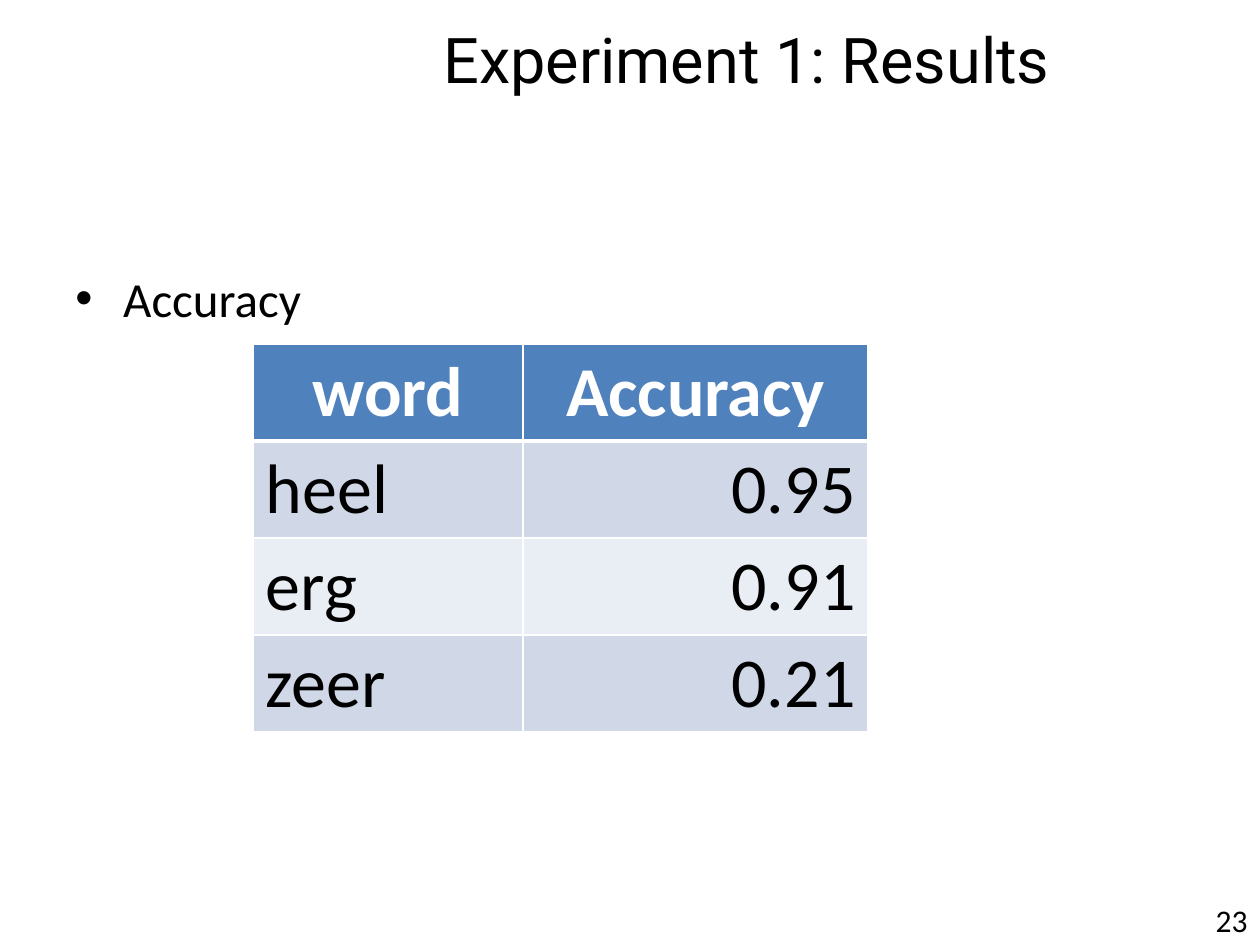
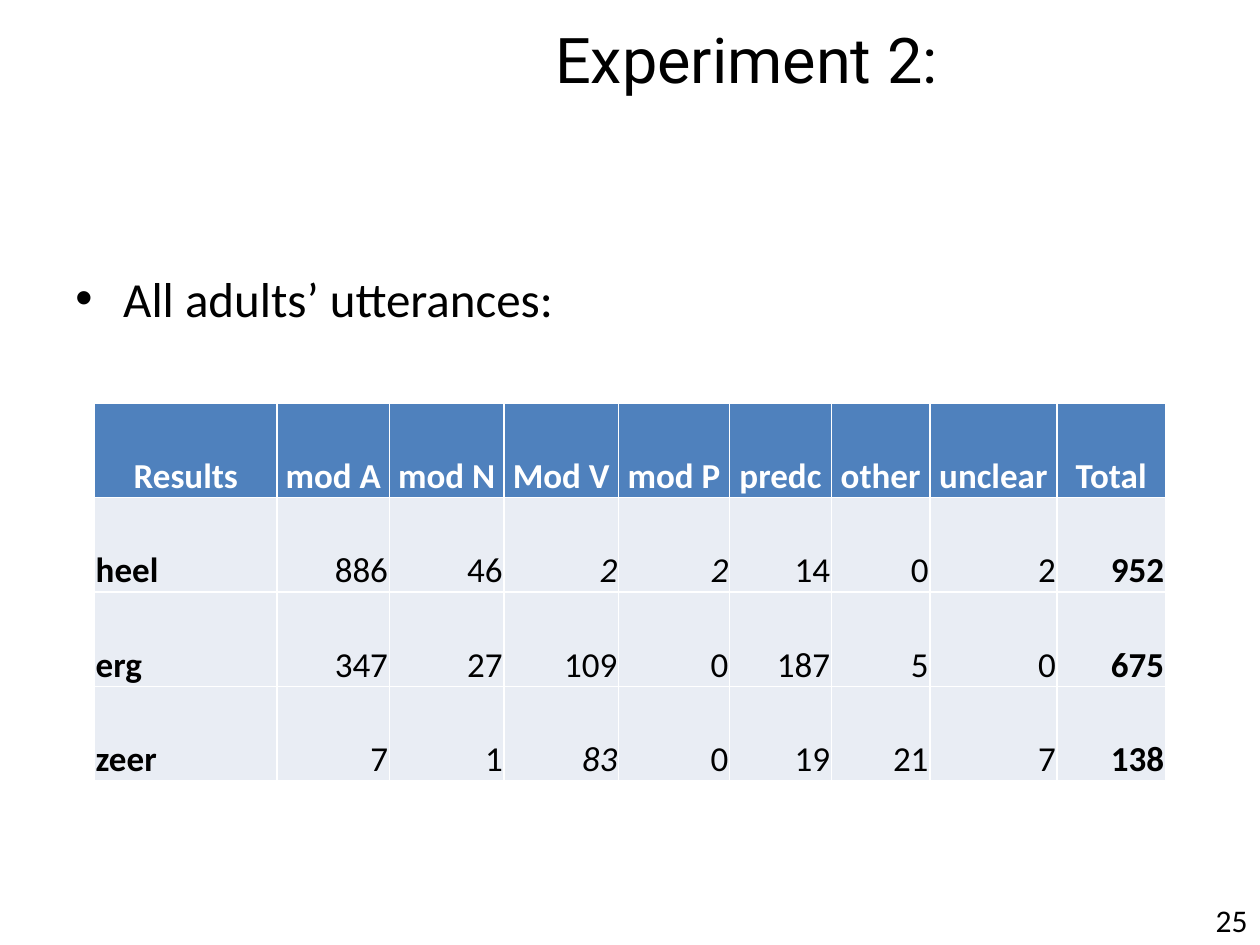
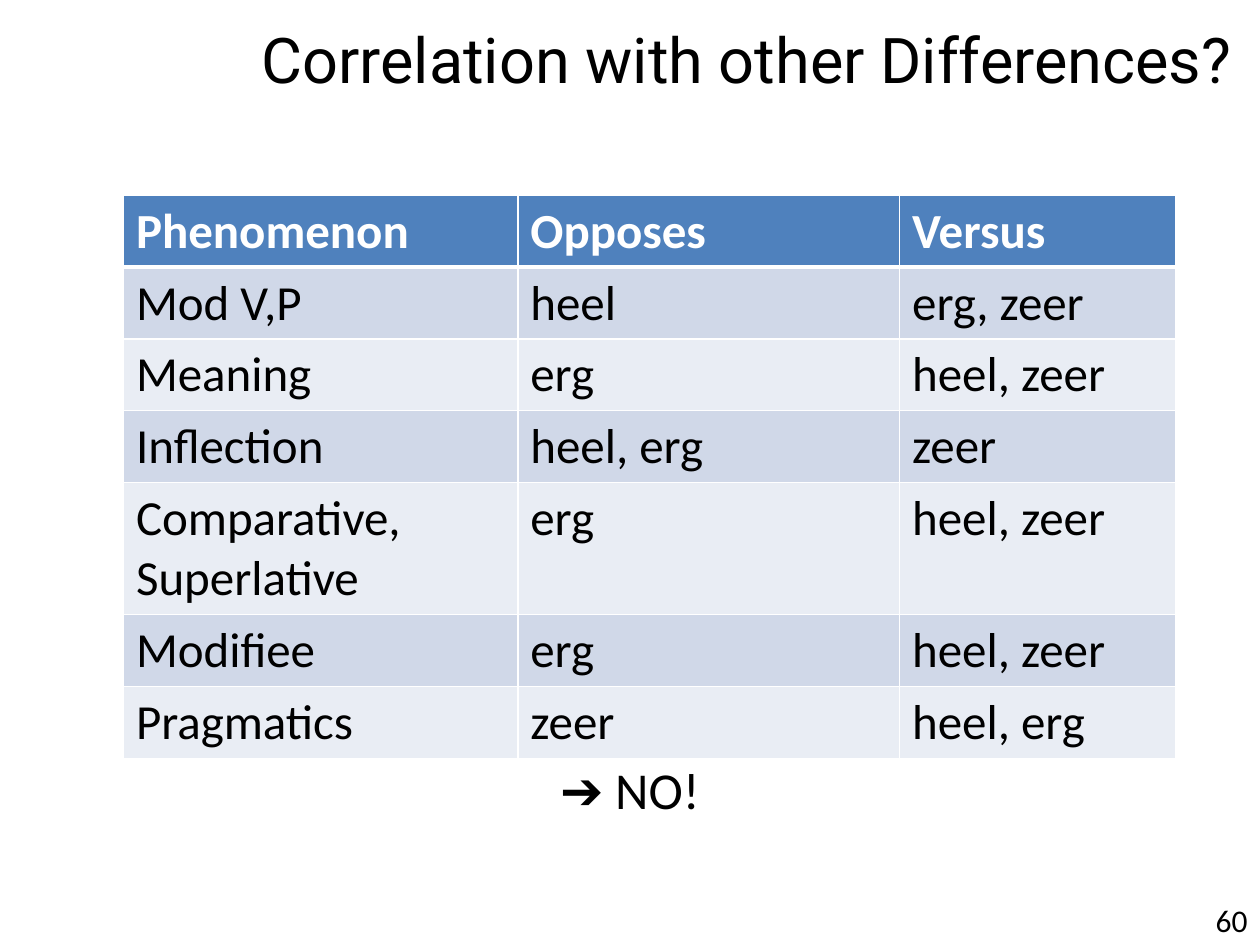
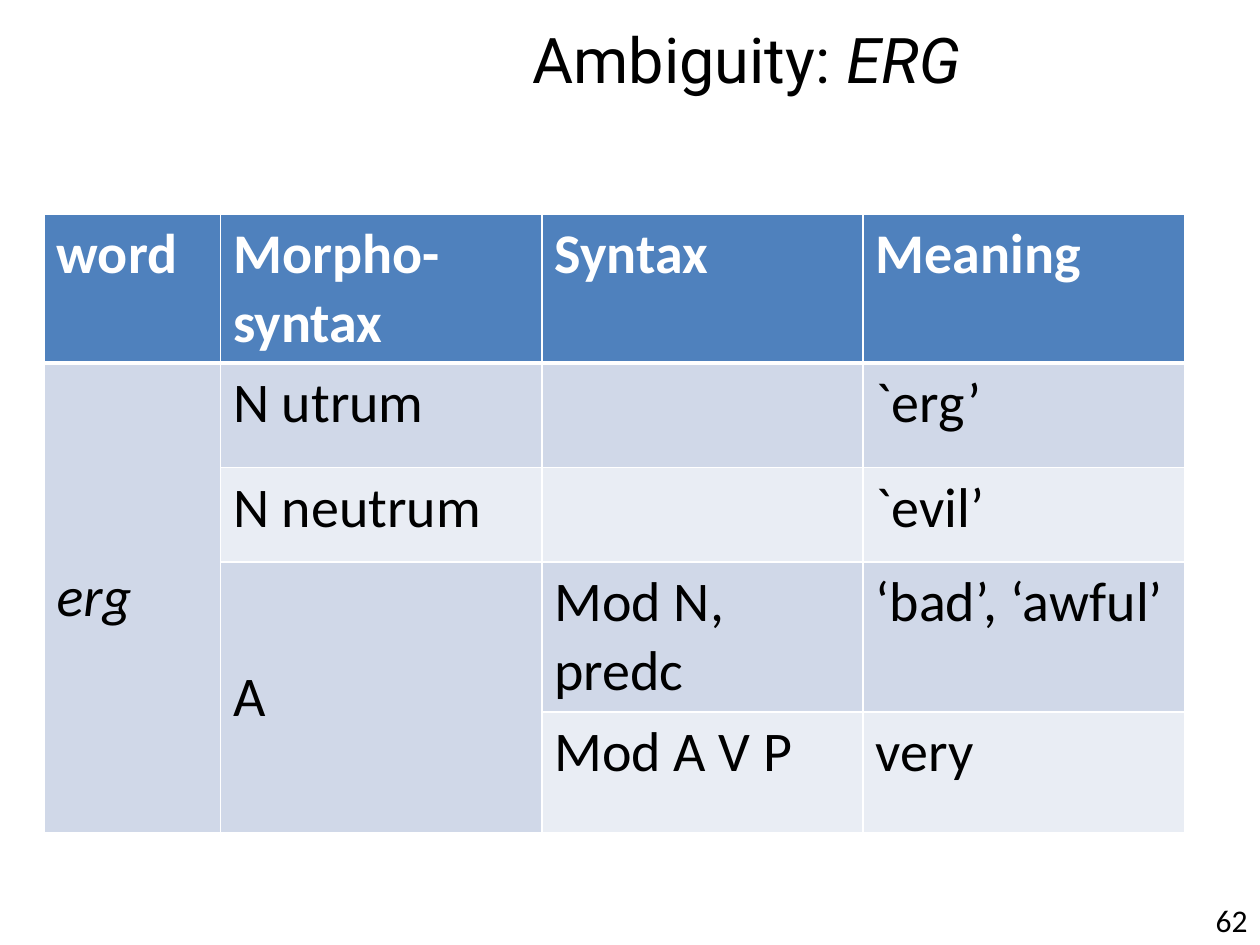
from dataclasses import dataclass

from lxml.etree import SubElement
from pptx import Presentation
from pptx.dml.color import RGBColor
from pptx.enum.text import MSO_ANCHOR, PP_ALIGN
from pptx.oxml.ns import qn
from pptx.util import Inches, Pt


@dataclass(frozen=True)
class Theme:
    ink: str = "000000"
    paper: str = "FFFFFF"
    header: str = "4F81BD"
    dark_band: str = "D0D8E8"
    light_band: str = "E9EDF4"
    title_font: str = "Roboto"
    body_font: str = "Calibri"
    title_size: float = 36
    bullet_size: float = 28
    verdict_size: float = 29.6
    number_size: float = 18
    grid_line: float = 1
    header_line: float = 3


THEME = Theme()
BANDS = (THEME.dark_band, THEME.light_band)
ALIGN = {"l": PP_ALIGN.LEFT, "c": PP_ALIGN.CENTER, "r": PP_ALIGN.RIGHT}

TITLE_AREA = (1.85, 0, 8.15, 0.92)
BODY_AREA = (0.5, 2.08, 9, 4.62)
NUMBER_AREA = (8.94, 7.1, 1.06, 0.4)
BULLET_INDENT = 0.38

# Text between asterisks is italic; a line break starts a new paragraph.
# "header_align" and "align" hold one letter per column.
SLIDES = [
    {
        "title": "Experiment 1: Results", "number": 23, "bullet": "Accuracy",
        "table": {
            "corner": (2.01, 2.73), "size": 40,
            "columns": [2.14, 2.74], "heights": [0.77] * 4,
            "header_align": "cc", "align": "lr",
            "rows": [
                ["word", "Accuracy"],
                ["heel", "0.95"],
                ["erg", "0.91"],
                ["zeer", "0.21"],
            ],
        },
    },
    {
        "title": "Experiment 2:", "number": 25, "bullet": "All adults’ utterances:",
        "table": {
            "corner": (0.75, 3.2), "size": 20,
            "columns": [1.45, 0.89, 0.91, 0.91, 0.88, 0.81, 0.78, 1.01, 0.86],
            "heights": [0.75] * 4,
            "header_align": "c" * 9, "align": "l" + "r" * 8,
            "bands": (THEME.light_band,), "header_line": THEME.grid_line,
            "bold_columns": (0, 8),
            "cell_format": {
                "vertical_anchor": MSO_ANCHOR.BOTTOM, "margin_left": Inches(0.01),
                "margin_right": Inches(0.01), "margin_top": Inches(0.01),
                "margin_bottom": 0,
            },
            "rows": [
                ["Results", "mod A", "mod N", "Mod V", "mod P", "predc", "other",
                 "unclear", "Total"],
                ["heel", "886", "46", "*2*", "*2*", "14", "0", "2", "952"],
                ["erg", "347", "27", "109", "0", "187", "5", "0", "675"],
                ["zeer", "7", "1", "*83*", "0", "19", "21", "7", "138"],
            ],
        },
    },
    {
        "title": "Correlation with other Differences?", "number": 60,
        "verdict": "➔ NO!",
        "table": {
            "corner": (0.98, 1.55), "size": 28,
            "columns": [3.13, 3.03, 2.19],
            "heights": [0.57] * 4 + [1.05] + [0.57] * 2,
            "header_align": "lll", "align": "lll",
            "rows": [
                ["Phenomenon", "Opposes", "Versus"],
                ["Mod V,P", "heel", "erg, zeer"],
                ["Meaning", "erg", "heel, zeer"],
                ["Inflection", "heel, erg", "zeer"],
                ["Comparative, Superlative", "erg", "heel, zeer"],
                ["Modifiee", "erg", "heel, zeer"],
                ["Pragmatics", "zeer", "heel, erg"],
            ],
        },
    },
    {
        "title": "Ambiguity: *ERG*", "number": 62,
        "table": {
            "corner": (0.35, 1.7), "size": 32,
            "columns": [1.4, 2.55, 2.55, 2.55],
            "heights": [1.18, 0.83, 0.75, 1.19, 0.96],
            "header_align": "llll", "align": "llll",
            "merges": [((1, 0), (4, 0)), ((3, 1), (4, 1))],
            "rows": [
                ["word", "Morpho-\nsyntax", "Syntax", "Meaning"],
                ["*erg*", "N utrum", "", "`erg’"],
                ["", "N neutrum", "", "`evil’"],
                ["", "A", "Mod N, predc", "‘bad’, ‘awful’"],
                ["", "", "Mod A V P", "very"],
            ],
        },
    },
]


def apply(target, values):
    for attribute, value in values.items():
        setattr(target, attribute, value)


def write(frame, text, size, align="l", font=THEME.body_font, color=THEME.ink, bold=False):
    """Fill a text frame, reading the italic and paragraph marks."""
    for index, line in enumerate(text.split("\n")):
        paragraph = frame.add_paragraph() if index else frame.paragraphs[0]
        paragraph.alignment = ALIGN[align]
        for part, words in enumerate(line.split("*")):
            if words:
                run = paragraph.add_run()
                run.text = words
                apply(run.font, {"name": font, "size": Pt(size), "bold": bold,
                                 "italic": part % 2 == 1})
                run.font.color.rgb = RGBColor.from_string(color)


def add_text(slide, area, text, size, frame_format=None, **style):
    frame = slide.shapes.add_textbox(*map(Inches, area)).text_frame
    apply(frame, {"word_wrap": True, **(frame_format or {})})
    write(frame, text, size, **style)
    return frame


def add_bullet(slide, text):
    frame = add_text(slide, BODY_AREA, text, THEME.bullet_size)
    properties = frame.paragraphs[0]._p.get_or_add_pPr()
    properties.set("marL", str(Inches(BULLET_INDENT)))
    properties.set("indent", str(-Inches(BULLET_INDENT)))
    SubElement(properties, qn("a:buFont")).set("typeface", "Arial")
    SubElement(properties, qn("a:buChar")).set("char", "•")


def add_borders(cell, top, bottom):
    widths = {"L": THEME.grid_line, "R": THEME.grid_line, "T": top, "B": bottom}
    properties = cell._tc.get_or_add_tcPr()
    for side, width in widths.items():
        line = SubElement(properties, qn(f"a:ln{side}"))
        line.set("w", str(Pt(width)))
        fill = SubElement(line, qn("a:solidFill"))
        SubElement(fill, qn("a:srgbClr")).set("val", THEME.paper)


def add_grid(slide, content):
    rows, columns, heights = content["rows"], content["columns"], content["heights"]
    bands = content.get("bands", BANDS)
    header_line = content.get("header_line", THEME.header_line)
    area = (*content["corner"], sum(columns), sum(heights))
    grid = slide.shapes.add_table(len(rows), len(columns), *map(Inches, area)).table
    for column, width in zip(grid.columns, columns):
        column.width = Inches(width)
    for row, height in zip(grid.rows, heights):
        row.height = Inches(height)

    for r, row in enumerate(rows):
        is_header = r == 0
        fill = THEME.header if is_header else bands[(r - 1) % len(bands)]
        aligns = content["header_align" if is_header else "align"]
        for c, text in enumerate(row):
            cell = grid.cell(r, c)
            add_borders(cell, top=header_line if r == 1 else THEME.grid_line,
                        bottom=header_line if is_header else THEME.grid_line)
            cell.fill.solid()
            cell.fill.fore_color.rgb = RGBColor.from_string(fill)
            apply(cell, content.get("cell_format", {}))
            write(cell.text_frame, text, content["size"], aligns[c],
                  color=THEME.paper if is_header else THEME.ink,
                  bold=is_header or c in content.get("bold_columns", ()))

    for first, last in content.get("merges", ()):
        grid.cell(*first).merge(grid.cell(*last))
        grid.cell(*first).vertical_anchor = MSO_ANCHOR.MIDDLE


def add_slide(deck, content):
    slide = deck.slides.add_slide(deck.slide_layouts[6])
    if "bullet" in content:
        add_bullet(slide, content["bullet"])
    if "verdict" in content:
        add_text(slide, BODY_AREA, content["verdict"], THEME.verdict_size, align="c",
                 frame_format={"vertical_anchor": MSO_ANCHOR.BOTTOM,
                               "margin_bottom": Inches(0.19)})
    add_text(slide, TITLE_AREA, content["title"], THEME.title_size, align="c",
             font=THEME.title_font, frame_format={"vertical_anchor": MSO_ANCHOR.MIDDLE})
    add_text(slide, NUMBER_AREA, str(content["number"]), THEME.number_size, align="r")
    add_grid(slide, content["table"])


def main():
    deck = Presentation()
    apply(deck, {"slide_width": Inches(10), "slide_height": Inches(7.5)})
    for content in SLIDES:
        add_slide(deck, content)
    deck.save("out.pptx")


if __name__ == "__main__":
    main()
